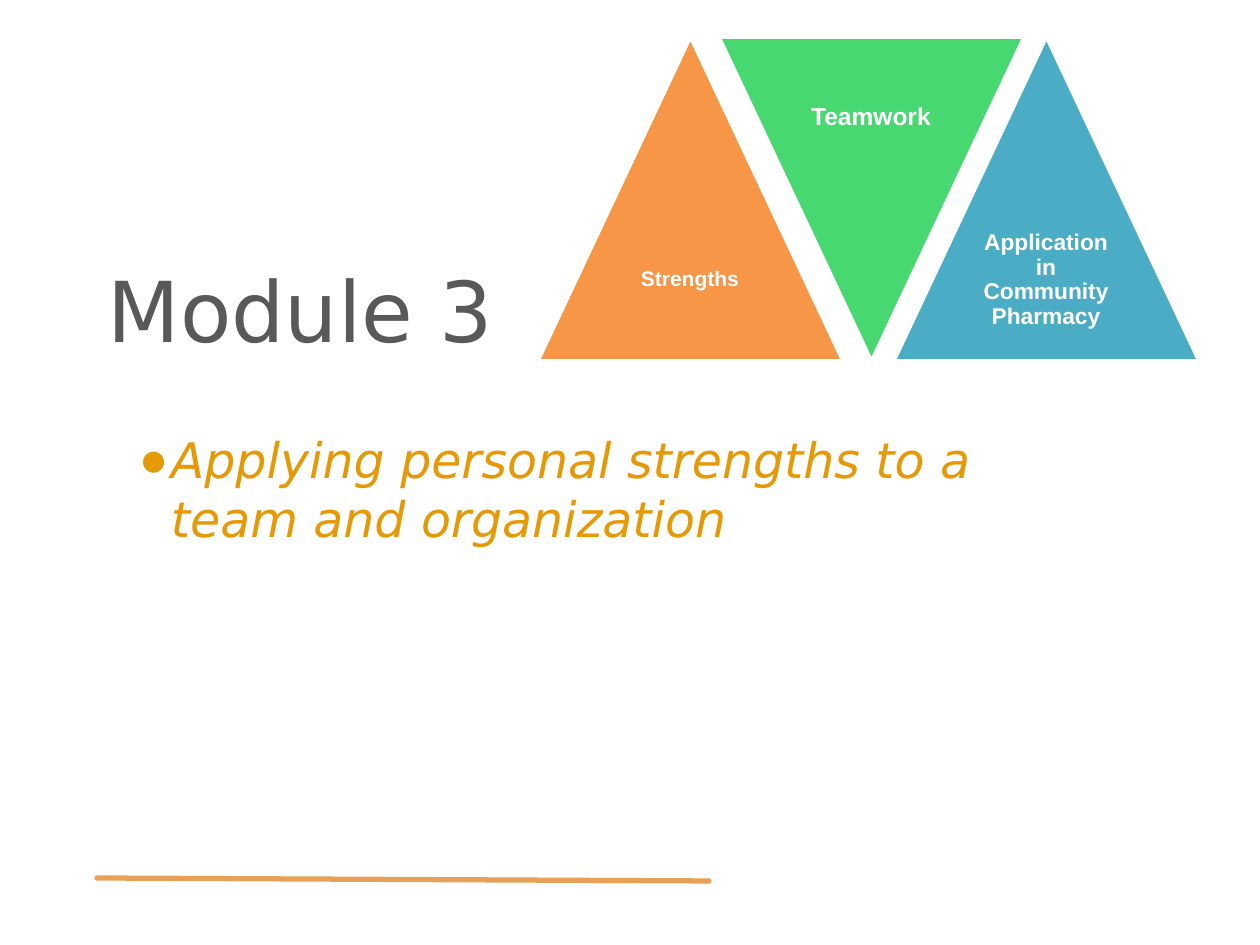
from dataclasses import dataclass

from lxml.etree import SubElement
from pptx import Presentation
from pptx.dml.color import RGBColor
from pptx.enum.shapes import MSO_CONNECTOR, MSO_SHAPE
from pptx.enum.text import MSO_ANCHOR, MSO_AUTO_SIZE, PP_ALIGN
from pptx.oxml.ns import qn
from pptx.slide import Slide
from pptx.text.text import TextFrame, _Paragraph
from pptx.util import Emu, Pt

PX_PER_INCH = 126
COLORS = {
    "white": "FFFFFF",
    "title": "595959",
    "subtitle": "E79805",
    "rule": "E6A057",
    "orange": "F79646",
    "green": "47D872",
    "blue": "4BACC6",
}
BODY_FONT = "DejaVu Sans"
LABEL_FONT = "Arial"
TRIANGLE_TOP, TRIANGLE_WIDTH, TRIANGLE_HEIGHT = 37, 305, 324
LABEL_WIDTH, LABEL_HEIGHT = TRIANGLE_WIDTH // 2, TRIANGLE_HEIGHT // 2


@dataclass(frozen=True)
class Triangle:
    label: str
    left: int
    color: str
    size: int
    inverted: bool = False


TRIANGLES = [
    Triangle("Application in Community Pharmacy", 894, "blue", 13),
    Triangle("Strengths", 538, "orange", 12),
    Triangle("Teamwork", 719, "green", 14, inverted=True),
]


def px(value: int) -> Emu:
    return Emu(round(value * 914400 / PX_PER_INCH))


def rgb(name: str) -> RGBColor:
    return RGBColor.from_string(COLORS[name])


def set_frame(frame: TextFrame, inset: int, anchor: MSO_ANCHOR) -> None:
    frame.word_wrap = True
    frame.auto_size = MSO_AUTO_SIZE.NONE
    frame.vertical_anchor = anchor
    frame.margin_left = frame.margin_right = px(inset)
    frame.margin_top = frame.margin_bottom = px(inset)


def add_run(paragraph: _Paragraph, text: str, font: str, size: int, color: str,
            bold: bool = False, italic: bool = False) -> None:
    run = paragraph.add_run()
    run.text = text
    run.font.name = font
    run.font.size = Pt(size)
    run.font.bold = bold
    run.font.italic = italic
    run.font.color.rgb = rgb(color)


def add_rule(slide: Slide) -> None:
    rule = slide.shapes.add_connector(
        MSO_CONNECTOR.STRAIGHT, px(97), px(878), px(709), px(881))
    rule.line.color.rgb = rgb("rule")
    rule.line.width = Pt(3)
    rule.line._get_or_add_ln().set("cap", "rnd")
    SubElement(rule._element.spPr, qn("a:effectLst"))


def set_title(slide: Slide) -> None:
    title = slide.shapes.title
    title.left, title.top = px(95), px(207)
    title.width, title.height = px(1071), px(203)
    set_frame(title.text_frame, 13, MSO_ANCHOR.MIDDLE)
    paragraph = title.text_frame.paragraphs[0]
    paragraph.alignment = PP_ALIGN.LEFT
    add_run(paragraph, "Module 3", BODY_FONT, 48, "title")


def add_subtitle(slide: Slide) -> None:
    box = slide.shapes.add_textbox(px(95), px(417), px(977), px(76))
    set_frame(box.text_frame, 13, MSO_ANCHOR.TOP)
    paragraph = box.text_frame.paragraphs[0]
    # Hanging bullet
    properties = paragraph._p.get_or_add_pPr()
    properties.set("marL", str(px(63)))
    properties.set("indent", str(-px(32)))
    bullet_color = SubElement(properties, qn("a:buClr"))
    SubElement(bullet_color, qn("a:srgbClr"), val=COLORS["subtitle"])
    SubElement(properties, qn("a:buFont"), typeface=LABEL_FONT)
    SubElement(properties, qn("a:buChar"), char="●")
    add_run(paragraph, "Applying personal strengths to a team and organization",
            BODY_FONT, 28, "subtitle", italic=True)


def add_triangle(slide: Slide, triangle: Triangle) -> None:
    shape = slide.shapes.add_shape(
        MSO_SHAPE.ISOSCELES_TRIANGLE, px(triangle.left), px(TRIANGLE_TOP),
        px(TRIANGLE_WIDTH), px(TRIANGLE_HEIGHT))
    shape.shadow.inherit = False
    shape.rotation = 180 if triangle.inverted else 0
    shape.fill.solid()
    shape.fill.fore_color.rgb = rgb(triangle.color)
    shape.line.color.rgb = rgb("white")
    shape.line.width = Pt(2)

    # The label sits in the wide half of the triangle
    label_top = TRIANGLE_TOP + (0 if triangle.inverted else LABEL_HEIGHT)
    label = slide.shapes.add_textbox(
        px(triangle.left + TRIANGLE_WIDTH // 4), px(label_top),
        px(LABEL_WIDTH), px(LABEL_HEIGHT))
    set_frame(label.text_frame, 9, MSO_ANCHOR.MIDDLE)
    paragraph = label.text_frame.paragraphs[0]
    paragraph.alignment = PP_ALIGN.CENTER
    paragraph.line_spacing = 0.9
    add_run(paragraph, triangle.label, LABEL_FONT, triangle.size, "white", bold=True)


def main() -> None:
    presentation = Presentation()
    presentation.slide_width, presentation.slide_height = px(1260), px(945)
    slide = presentation.slides.add_slide(presentation.slide_layouts[5])
    add_rule(slide)
    set_title(slide)
    add_subtitle(slide)
    for triangle in TRIANGLES:
        add_triangle(slide, triangle)
    presentation.save("out.pptx")


if __name__ == "__main__":
    main()
